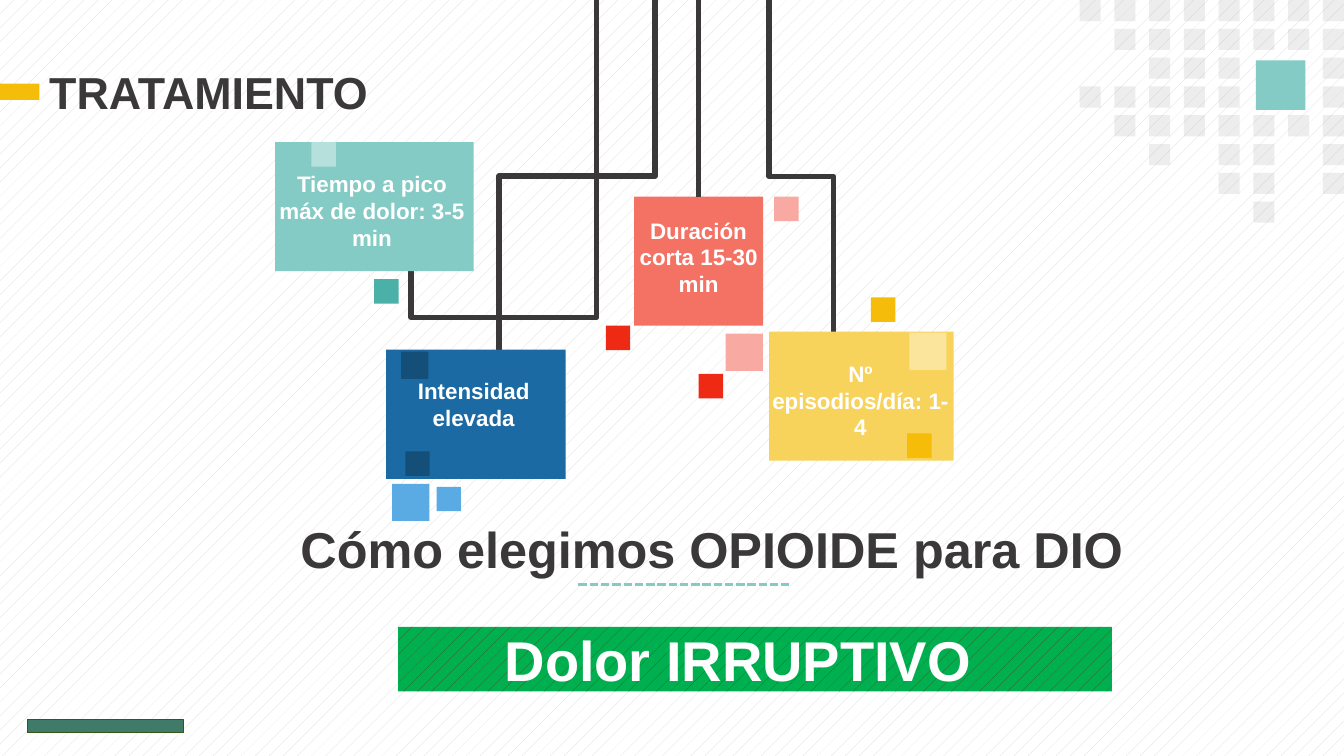
from lxml import etree
from pptx import Presentation
from pptx.dml.color import RGBColor
from pptx.enum.dml import MSO_LINE, MSO_PATTERN
from pptx.enum.shapes import MSO_CONNECTOR, MSO_SHAPE
from pptx.enum.text import PP_ALIGN
from pptx.oxml.ns import qn
from pptx.util import Pt

RECT = MSO_SHAPE.RECTANGLE
STRAIGHT, ELBOW = MSO_CONNECTOR.STRAIGHT, MSO_CONNECTOR.ELBOW
DASH = MSO_LINE.SQUARE_DOT
DOTTED = MSO_PATTERN.PERCENT_5
LEFT, CENTER = PP_ALIGN.LEFT, PP_ALIGN.CENTER

WHITE = RGBColor(0xFF, 0xFF, 0xFF)
SILVER = RGBColor(0xD9, 0xD9, 0xD9)
GRAY = RGBColor(0xA5, 0xA5, 0xA5)
INK = RGBColor(0x3A, 0x38, 0x38)
TEAL = RGBColor(0x84, 0xCB, 0xC5)
DARK_TEAL = RGBColor(0x4B, 0xB1, 0xA8)
PALE_TEAL = RGBColor(0xB5, 0xE0, 0xDC)
BLUE = RGBColor(0x1B, 0x6A, 0xA3)
NAVY = RGBColor(0x14, 0x4F, 0x7A)
SKY = RGBColor(0x5A, 0xAA, 0xE4)
CORAL = RGBColor(0xF4, 0x72, 0x64)
PINK = RGBColor(0xF8, 0xAA, 0xA2)
RED = RGBColor(0xEE, 0x29, 0x14)
YELLOW = RGBColor(0xF8, 0xD3, 0x5C)
GOLD = RGBColor(0xF5, 0xBD, 0x0A)
CREAM = RGBColor(0xFB, 0xE5, 0x9D)
GREEN = RGBColor(0x00, 0xB0, 0x50)
PINE = RGBColor(0x40, 0x7A, 0x69)
MOSS = RGBColor(0x37, 0x55, 0x17)

SMALL, LARGE = 17.5, 26.6
DOT_ROWS = ("xxxxxxxx", ".xxxxxxx", "..xxx..x", "xxxxx..x",
            ".xxxxxxx", "..x.xx.x", "....xx.x", ".....x..")

CARDS = (
    dict(box=(196.6, 101.5, 141.8, 92.2), color=TEAL,
         text="Tiempo a pico máx de dolor: 3-5 min", text_box=(-6.5, 16.6, 151.2, 65.5),
         squares=((70.6, 97.9, SMALL, DARK_TEAL), (25.9, 0, SMALL, PALE_TEAL)),
         wire=(426.2, 226.8, 97.2, 92.2)),
    dict(box=(275.8, 249.8, 128.2, 92.2), color=BLUE,
         text="Intensidad elevada", text_box=(5, 15.8, 115.2, 46.1),
         squares=((13.7, 72.7, SMALL, NAVY), (36, 97.9, SMALL, SKY),
                  (4.3, 95.8, LARGE, SKY), (10.8, 1.4, 19.4, NAVY)),
         wire=(468, 126, 80.6, 0)),
    dict(box=(452.9, 140.4, 92.2, 92.2), color=CORAL,
         text="Duración corta 15-30 min", text_box=(-11.5, 10.8, 115.2, 65.5),
         squares=((65.5, 97.9, LARGE, PINK), (46.1, 126.7, SMALL, RED),
                  (100.1, 0, SMALL, PINK), (-20.2, 92.2, SMALL, RED)),
         wire=None),
    dict(box=(549.4, 236.9, 131.8, 92.2), color=YELLOW,
         text="Nº episodios/día: 1-4", text_box=(-5, 16.6, 140.4, 65.5),
         squares=((98.6, 72.7, SMALL, GOLD), (100.1, 0.7, LARGE, CREAM),
                  (72.7, -24.5, SMALL, GOLD)),
         wire=(549.4, 126, 46, 0)),
)


def add_rect(s, x, y, w, h, color, alpha=None, line=None):
    """Add a flat rectangle."""
    sp = s.shapes.add_shape(RECT, Pt(x), Pt(y), Pt(w), Pt(h))
    sp.shadow.inherit = False
    sp.fill.solid()
    sp.fill.fore_color.rgb = color
    if alpha:
        clr = sp.fill._xPr.find(qn("a:solidFill"))[0]
        etree.SubElement(clr, qn("a:alpha")).set("val", str(alpha * 1000))
    if line:
        sp.line.color.rgb = line
        sp.line.width = Pt(0.75)
    else:
        sp.line.fill.background()
    return sp


def add_text(s, text, x, y, w, h, size=16, color=WHITE, align=CENTER, spacing=None):
    """Add a bold one-paragraph text box."""
    tf = s.shapes.add_textbox(Pt(x), Pt(y), Pt(w), Pt(h)).text_frame
    tf.word_wrap = True
    p = tf.paragraphs[0]
    p.alignment = align
    p.line_spacing = spacing
    r = p.add_run()
    r.text = text
    r.font.name, r.font.size, r.font.bold = "Arial", Pt(size), True
    r.font.color.rgb = color


def add_line(s, kind, x1, y1, x2, y2, color=INK, width=4):
    """Add a connector without shadow."""
    c = s.shapes.add_connector(kind, Pt(x1), Pt(y1), Pt(x2), Pt(y2))
    c.line.color.rgb = color
    c.line.width = Pt(width)
    etree.SubElement(c._element.spPr, qn("a:effectLst"))
    return c


def add_wire(s, x1, x2, y2, bend):
    """Hang an elbow from the top edge, turning at height bend."""
    left, top = (x1 + x2 - y2) / 2, (y2 - abs(x2 - x1)) / 2
    c = add_line(s, ELBOW, left, top, left + y2, top + abs(x2 - x1))
    xfrm = c._element.spPr.find(qn("a:xfrm"))
    xfrm.set("rot", "5400000" if x2 < x1 else "16200000")
    if x2 > x1:
        xfrm.set("flipH", "1")
    av = c._element.spPr.find(qn("a:prstGeom")).find(qn("a:avLst"))
    gd = etree.SubElement(av, qn("a:gd"))
    gd.set("name", "adj1")
    gd.set("fmla", f"val {round(bend / y2 * 100000)}")


def draw_dots(s, x, y, w, h):
    """Draw the corner pattern of squares."""
    size = 15.1
    add_rect(s, x + 126, y + 43.2, 35.3, 35.3, TEAL)
    step_x, step_y = (w - size) / 7, (h - size) / 7
    for i, row in enumerate(DOT_ROWS):
        for j, mark in enumerate(row):
            if mark == "x":
                add_rect(s, x + j * step_x, y + i * step_y, size, size, GRAY, alpha=20)


def draw_footer(s, x, y, w, h):
    """Draw the footer bar."""
    add_rect(s, x, y, w, h, PINE, line=MOSS)


def draw_header(s, x, y, w, h):
    """Draw the heading with its gold tab."""
    add_text(s, "TRATAMIENTO", x + 28.1, y, w - 28.1, h, size=32, color=INK, align=LEFT)
    add_rect(s, x, y + 17.3, 28.1, 11.5, GOLD)


def draw_card(s, box, color, text, text_box, squares, wire):
    """Draw a hanging card with its wire, label and squares."""
    x, y, w, h = box
    if wire:
        start, bend, dx, dy = wire
        add_wire(s, start, x + dx, y + dy, bend)
    card = add_rect(s, x, y, w, h, color)
    if not wire:
        c = add_line(s, STRAIGHT, x + w / 2, 0, x + w / 2, y)
        c.end_connect(card, 0)
    for dx, dy, size, shade in squares:
        add_rect(s, x + dx, y + dy, size, size, shade)
    dx, dy, tw, th = text_box
    add_text(s, text, x + dx, y + dy, tw, th)


def draw_question(s, x, y, w, h):
    """Draw the question and its dashed rule."""
    add_text(s, "Cómo elegimos OPIOIDE para DIO", x, y, w, h, size=36, color=INK)
    c = add_line(s, STRAIGHT, x + 300.2, y + h, x + 450.7, y + h, color=TEAL, width=2)
    c.line.dash_style = DASH


def draw_banner(s, x, y, w, h):
    """Draw the green banner."""
    sp = add_rect(s, x, y, w, h, GREEN)
    sp.fill.patterned()
    sp.fill.pattern = DOTTED
    sp.fill.fore_color.rgb, sp.fill.back_color.rgb = MOSS, GREEN
    add_text(s, "Dolor IRRUPTIVO", x + 69.1, y + 0.7, 369.4, 59, size=40,
             align=LEFT, spacing=0.9)


def main():
    """Build and save the slide."""
    prs = Presentation()
    prs.slide_width, prs.slide_height = Pt(960), Pt(540)
    s = prs.slides.add_slide(prs.slide_layouts[6])
    fill = s.background.fill
    fill.patterned()
    fill.pattern = DOTTED
    fill.fore_color.rgb, fill.back_color.rgb = SILVER, WHITE
    draw_dots(s, 771.1, 0, 188.9, 159.1)
    draw_footer(s, 19.4, 514, 111.6, 9.4)
    draw_header(s, 0, 42.5, 308.9, 46.1)
    draw_question(s, 113, 366.5, 791.3, 51.1)
    for card in CARDS:
        draw_card(s, **card)
    draw_banner(s, 284.4, 447.8, 509.8, 46.1)
    prs.save("out.pptx")


if __name__ == "__main__":
    main()
